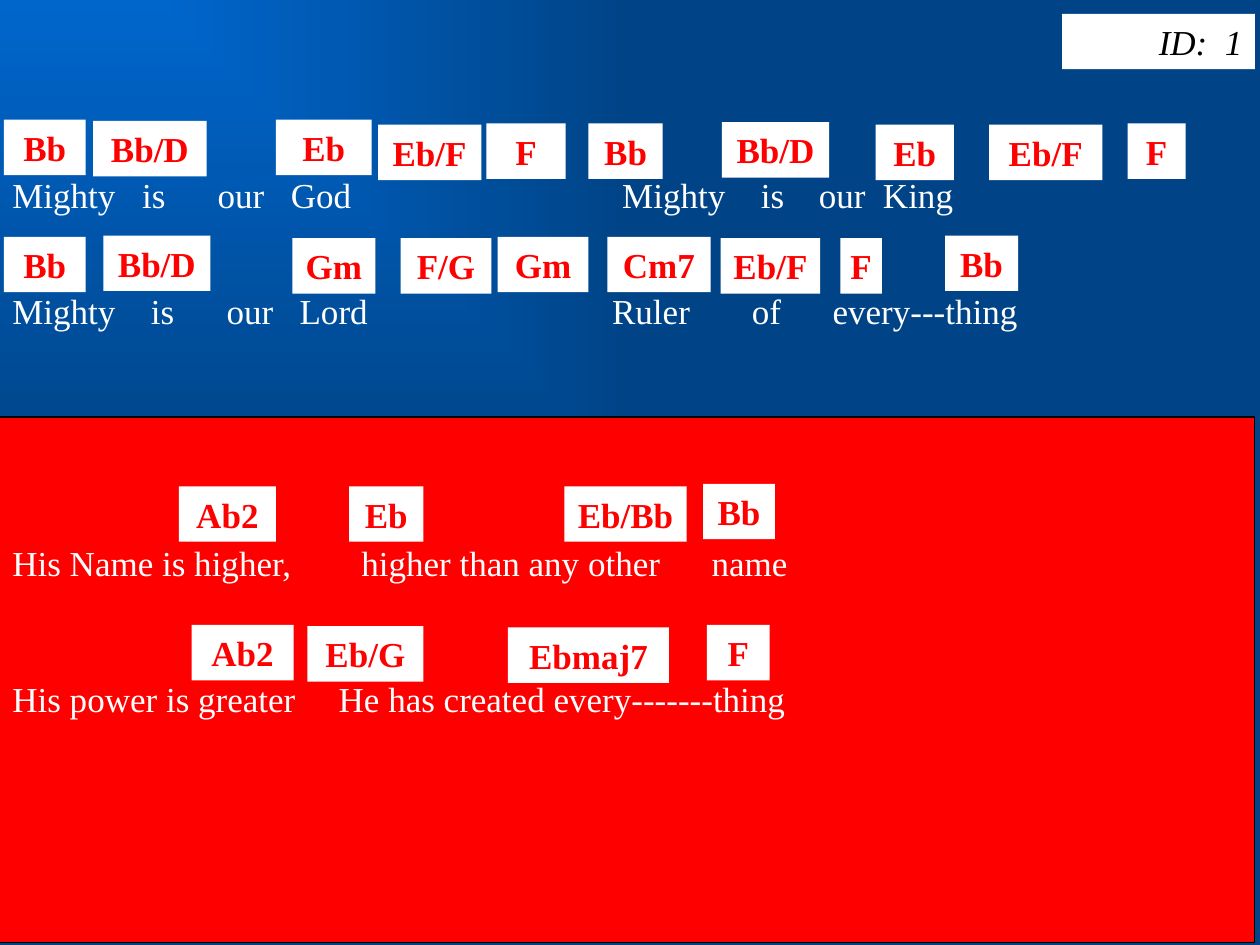
import lxml.etree
import pptx
import pptx.dml.color
import pptx.enum.shapes
import pptx.enum.text
import pptx.oxml.ns
import pptx.util

ALIGN = pptx.enum.text.PP_ALIGN
COLS, ROWS = 100, 75
TALL = 4.4


def paint(code):
    return pptx.dml.color.RGBColor.from_string(code)


class Sheet:
    face, size = "Times New Roman", 20
    red, white, black = "FF0000", "FFFFFF", "000000"

    def __init__(self, deck):
        self.deck = deck
        self.slide = deck.slides.add_slide(deck.slide_layouts[6])

    def across(self, cols):
        return round(self.deck.slide_width * cols / COLS)

    def down(self, rows):
        return round(self.deck.slide_height * rows / ROWS)

    def place(self, left, top, width, height):
        return (self.across(left), self.down(top),
                self.across(width), self.down(height))

    def back(self, start, end):
        fill = self.slide.background.fill
        fill.gradient()
        for stop, code in zip(fill.gradient_stops, (start, end)):
            stop.color.rgb = paint(code)
        name = pptx.oxml.ns.qn
        grad = self.slide.element.find(".//" + name("a:gradFill"))
        grad.remove(grad.find(name("a:lin")))
        way = lxml.etree.SubElement(grad, name("a:path"), {"path": "rect"})
        lxml.etree.SubElement(way, name("a:fillToRect"), r="100000", b="100000")

    def letter(self, shape, text, code, align, bold=False, slant=False):
        para = shape.text_frame.paragraphs[0]
        para.text = text
        para.alignment = align
        font = para.font
        font.name, font.size = self.face, pptx.util.Pt(self.size)
        font.bold, font.italic = bold, slant
        font.color.rgb = paint(code)
        return para

    def block(self, left, top, width, height, code, edge=None):
        shape = self.slide.shapes.add_shape(
            pptx.enum.shapes.MSO_SHAPE.RECTANGLE,
            *self.place(left, top, width, height))
        shape.shadow.inherit = False
        shape.fill.solid()
        shape.fill.fore_color.rgb = paint(code)
        if edge:
            shape.line.color.rgb = paint(edge)
            shape.line.width = pptx.util.Pt(0.75)
        else:
            shape.line.fill.background()
        return shape

    def label(self, text, left, top, width, code, align, **style):
        shape = self.block(left, top, width, TALL, self.white)
        shape.text_frame.word_wrap = False
        self.letter(shape, text, code, align, **style)

    def chord(self, text, left, top, width):
        self.label(text, left, top, width, self.red, ALIGN.CENTER, bold=True)

    def lyric(self, top, words, stops):
        box = self.slide.shapes.add_textbox(*self.place(0, top, 145.7, TALL))
        box.text_frame.word_wrap = True
        para = self.letter(box, "\t".join(words), self.white, ALIGN.LEFT)
        name = pptx.oxml.ns.qn
        tabs = lxml.etree.Element(name("a:tabLst"))
        for stop in stops:
            lxml.etree.SubElement(tabs, name("a:tab"),
                                  pos=str(self.across(stop)), algn="l")
        para._p.get_or_add_pPr().insert(0, tabs)


LYRICS = [
    (13.3, "Mighty|is|our|God|Mighty|is|our|King",
     (10.3, 16.3, 22.1, 48.4, 59.4, 64, 69.1)),
    (22.5, "Mighty|is|our|Lord|Ruler|of|every---thing",
     (11, 17, 22.8, 47.6, 58.7, 65.1)),
    (42.5, "His Name is higher,|higher than any other|name", (27.7, 55.5)),
    (53.3, "His power is greater|He has created every-------thing", (25.9,)),
]

CHORDS = [
    ("Bb", 0.3, 9.5, 6.5), ("Bb/D", 7.4, 9.6, 9), ("Eb", 21.9, 9.5, 7.6),
    ("Eb/F", 30, 9.9, 8.2), ("F", 38.6, 9.8, 6.3), ("Bb", 46.7, 9.8, 5.9),
    ("Bb/D", 57.3, 9.7, 8.5), ("Eb", 69.5, 9.9, 6.2),
    ("Eb/F", 78.5, 9.9, 9), ("F", 89.5, 9.8, 4.6),
    ("Bb", 0.3, 18.8, 6.5), ("Bb/D", 8.2, 18.7, 8.5),
    ("Gm", 23.2, 18.9, 6.6), ("F/G", 31.8, 18.9, 7.2),
    ("Gm", 39.5, 18.8, 7.2), ("Cm7", 48.2, 18.8, 8.2),
    ("Eb/F", 57.2, 18.9, 7.9), ("F", 66.7, 18.9, 3.3),
    ("Bb", 75, 18.7, 5.8),
    ("Ab2", 14.2, 38.6, 7.7), ("Eb", 27.7, 38.6, 5.9),
    ("Eb/Bb", 44.8, 38.6, 9.7), ("Bb", 55.8, 38.4, 5.7),
    ("Ab2", 15.2, 49.6, 8.1), ("Eb/G", 24.4, 49.7, 9.2),
    ("Ebmaj7", 40.3, 49.8, 12.8), ("F", 56.1, 49.6, 5),
]


def main():
    deck = pptx.Presentation()
    deck.slide_width = pptx.util.Inches(10)
    deck.slide_height = pptx.util.Inches(7.5)
    sheet = Sheet(deck)
    sheet.back("0066CC", "004487")
    sheet.block(-0.4, 33.1, 100, 41.7, sheet.red, sheet.black)
    for top, words, stops in LYRICS:
        sheet.lyric(top, words.split("|"), stops)
    for chord in CHORDS:
        sheet.chord(*chord)
    sheet.label("ID:  1", 84.3, 1.1, 15.3, sheet.black, ALIGN.RIGHT, slant=True)
    deck.save("out.pptx")


if __name__ == "__main__":
    main()
